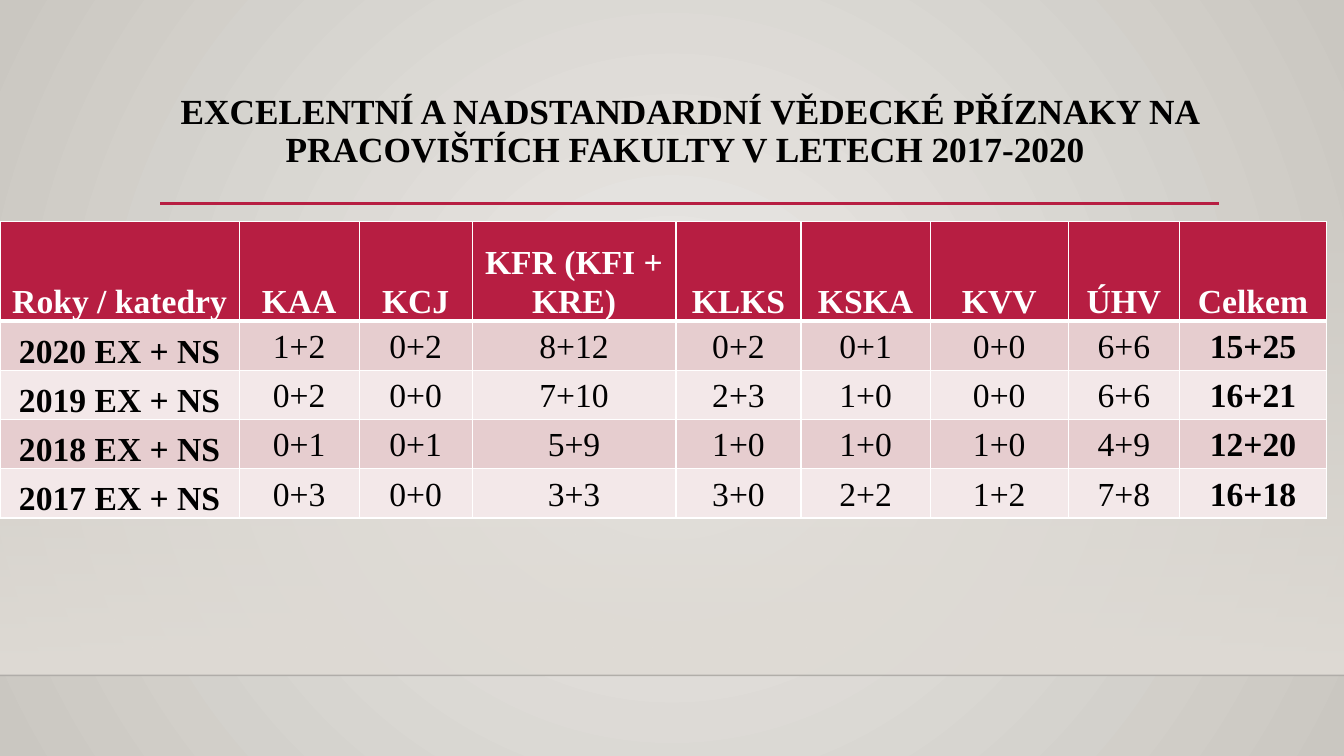
from lxml import etree
from pptx import Presentation
from pptx.dml import color
from pptx.enum import shapes, text
from pptx.oxml import ns
from pptx.util import Inches, Pt

FONT = "Times New Roman"
RED, WHITE, BLACK = "B71E42", "FFFFFF", "000000"
BANDS = ["E6CDCF", "F3E8E9"]
COLS = [2.37, 1.19, 1.12, 2.02, 1.24, 1.28, 1.37, 1.1, 1.46]
ROWS = [0.99] + [0.49] * 4
DATA = [
    ["Roky / katedry", "KAA", "KCJ", "KFR (KFI + KRE)", "KLKS", "KSKA", "KVV", "ÚHV", "Celkem"],
    ["2020 EX + NS", "1+2", "0+2", "8+12", "0+2", "0+1", "0+0", "6+6", "15+25"],
    ["2019 EX + NS", "0+2", "0+0", "7+10", "2+3", "1+0", "0+0", "6+6", "16+21"],
    ["2018 EX + NS", "0+1", "0+1", "5+9", "1+0", "1+0", "1+0", "4+9", "12+20"],
    ["2017 EX + NS", "0+3", "0+0", "3+3", "3+0", "2+2", "1+2", "7+8", "16+18"],
]


def rgb(code):
    return color.RGBColor.from_string(code)


def add(root, tag, **attrs):
    node = etree.SubElement(root, ns.qn(tag))
    for key, value in attrs.items():
        node.set(key, str(value))
    return node


def shade(root, stops):
    grad = root.find(".//" + ns.qn("a:gradFill"))
    for child in list(grad):
        grad.remove(child)
    group = add(grad, "a:gsLst")
    for place, code, alpha in stops:
        stop = add(group, "a:gs", pos=place * 1000)
        tone = add(stop, "a:srgbClr", val=code)
        if alpha < 100:
            add(tone, "a:alpha", val=alpha * 1000)
    return grad


def style(par, size, code, bold):
    par.alignment = text.PP_ALIGN.CENTER
    for run in par.runs:
        run.font.name = FONT
        run.font.size = Pt(size)
        run.font.bold = bold
        run.font.color.rgb = rgb(code)


def rule(slide, left, top, width, code, weight, alpha=100):
    line = slide.shapes.add_connector(
        shapes.MSO_CONNECTOR.STRAIGHT,
        Inches(left), Inches(top), Inches(left + width), Inches(top))
    line.line.color.rgb = rgb(code)
    line.line.width = Pt(weight)
    props = line._element.spPr
    if alpha < 100:
        add(props.find(".//" + ns.qn("a:srgbClr")), "a:alpha", val=alpha * 1000)
    add(props, "a:effectLst")


def backdrop(slide, left, top, width, height):
    slide.background.fill.gradient()
    grad = shade(slide._element, [(0, "ECEAE7", 100), (100, "CAC7C1", 100)])
    route = add(grad, "a:path", path="circle")
    add(route, "a:fillToRect", l=50000, t=50000, r=50000, b=50000)
    panel = slide.shapes.add_shape(
        shapes.MSO_SHAPE.RECTANGLE,
        Inches(left), Inches(top), Inches(width), Inches(height))
    panel.shadow.inherit = False
    panel.line.fill.background()
    panel.fill.gradient()
    grad = shade(panel._element, [(0, "DFDBD5", 0), (100, "DFDBD5", 100)])
    add(grad, "a:lin", ang=5400000, scaled=0)
    rule(slide, left, top + height, width, "000001", 1, 20)


def heading(slide, left, top, width, height):
    rule(slide, left, top + height - 0.01, width, RED, 2.5)
    title = slide.shapes.title
    title.left, title.top = Inches(left), Inches(top)
    title.width, title.height = Inches(width), Inches(height)
    frame = title.text_frame
    frame.text = "EXCELENTNÍ A NADSTANDARDNÍ VĚDECKÉ PŘÍZNAKY NA PRACOVIŠTÍCH FAKULTY V LETECH 2017-2020 "
    frame.word_wrap = True
    frame.auto_size = text.MSO_AUTO_SIZE.NONE
    frame.vertical_anchor = text.MSO_ANCHOR.TOP
    par = frame.paragraphs[0]
    par.line_spacing = 0.9
    style(par, 25.2, BLACK, True)


def border(cell, row):
    props = cell._tc.get_or_add_tcPr()
    heavy = {0: "a:lnB", 1: "a:lnT"}.get(row)
    for i, tag in enumerate(["a:lnL", "a:lnR", "a:lnT", "a:lnB"]):
        edge = add(props, tag, w=Pt(3 if tag == heavy else 1))
        add(add(edge, "a:solidFill"), "a:srgbClr", val=WHITE)
        props.insert(i, edge)


def results(slide, left, top, width, height):
    table = slide.shapes.add_table(
        len(ROWS), len(COLS),
        Inches(left), Inches(top), Inches(width), Inches(height)).table
    for col, size in zip(table.columns, COLS):
        col.width = Inches(size * width / sum(COLS))
    for row, size in zip(table.rows, ROWS):
        row.height = Inches(size * height / sum(ROWS))
    for r, record in enumerate(DATA):
        for c, value in enumerate(record):
            cell = table.cell(r, c)
            cell.text = value
            cell.margin_left = cell.margin_right = Inches(0.05)
            cell.margin_top = cell.margin_bottom = 0
            low = r == 0 or c == 0
            cell.vertical_anchor = text.MSO_ANCHOR.BOTTOM if low else text.MSO_ANCHOR.MIDDLE
            cell.fill.solid()
            cell.fill.fore_color.rgb = rgb(BANDS[(r - 1) % 2] if r else RED)
            border(cell, r)
            par = cell.text_frame.paragraphs[0]
            par.line_spacing = 1.07
            par.space_after = Pt(12)
            style(par, 24, BLACK if r else WHITE, low or c == len(COLS) - 1)


def main():
    deck = Presentation()
    deck.slide_width, deck.slide_height = Inches(13.33), Inches(7.5)
    slide = deck.slides.add_slide(deck.slide_layouts[5])
    backdrop(slide, 0, 2.21, 13.33, 4.49)
    heading(slide, 1.59, 0.88, 10.5, 1.15)
    results(slide, 0, 2.2, 13.16, 2.94)
    deck.save("out.pptx")


if __name__ == "__main__":
    main()
